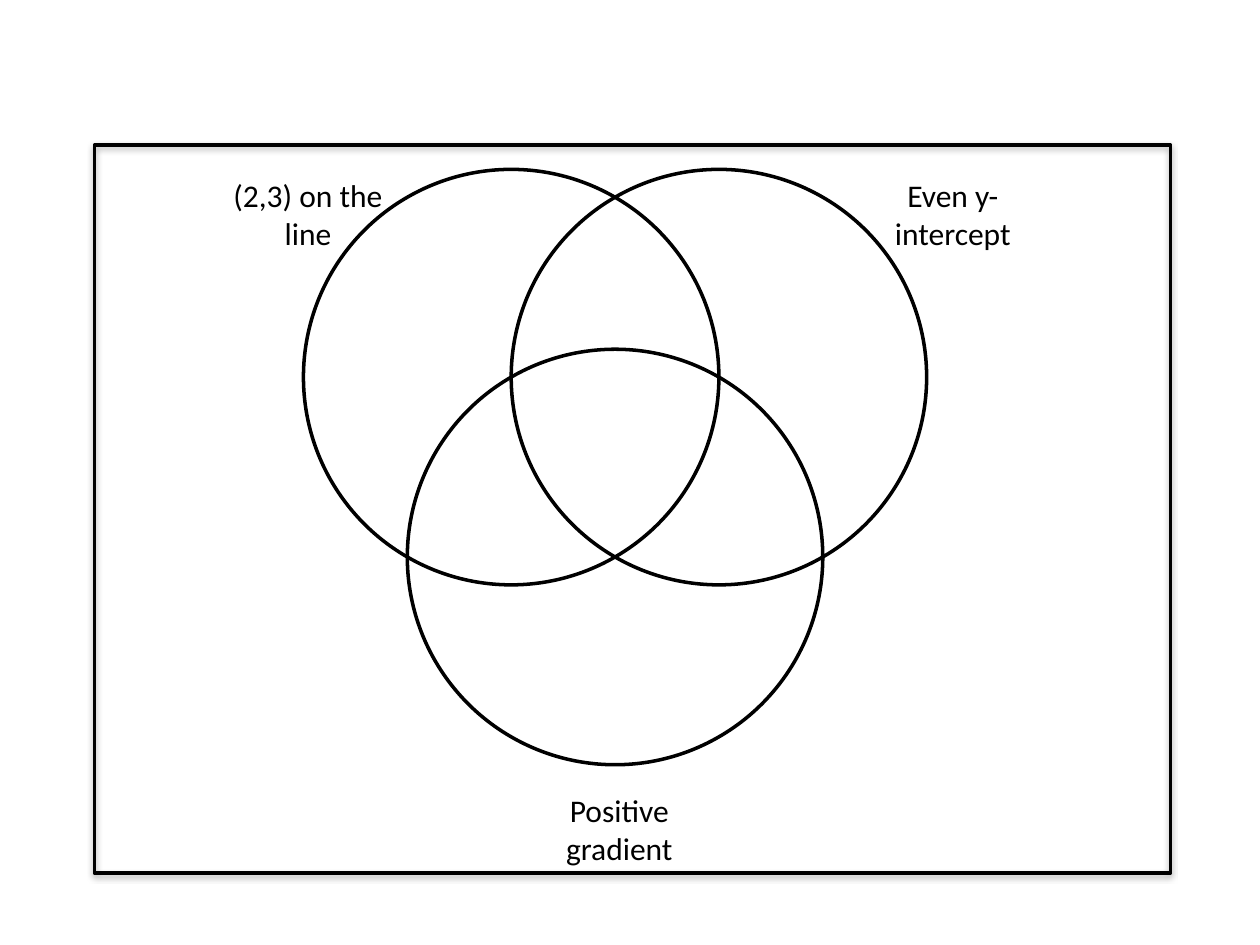
"""Build a Venn diagram slide for sorting straight lines by three properties."""
import math

from lxml import etree
from pptx import Presentation
from pptx.dml.color import RGBColor
from pptx.enum import shapes, text
from pptx.oxml import ns
from pptx.util import Pt


def color(value):
    return RGBColor.from_string(value)


def add_outline(kind, left, top, width, height):
    shape = page.shapes.add_shape(kind, Pt(left), Pt(top), Pt(width), Pt(height))
    shape.shadow.inherit = False
    shape.fill.background()
    shape.line.color.rgb = color(BLACK)
    shape.line.width = Pt(2)
    return shape


BLACK = "000000"
RADIUS = 118.7
VENN_LEFT, VENN_TOP = 173.4, 96.8
LABEL_TOP, LABEL_WIDTH, LABEL_HEIGHT = 97.2, 113, 51
FONT = {"name": "Calibri", "size": Pt(18)}

deck = Presentation()
deck.slide_width, deck.slide_height = Pt(720), Pt(540)
page = deck.slides.add_slide(deck.slide_layouts[6])

circles = []
for across, down in [(0, 0), (1, 0), (0.5, math.sqrt(3) / 2)]:
    circles.append(add_outline(shapes.MSO_SHAPE.OVAL,
                               VENN_LEFT + across * RADIUS, VENN_TOP + down * RADIUS,
                               2 * RADIUS, 2 * RADIUS))
page.shapes.add_group_shape(circles)

labels = [
    ("(2,3) on the line", 119.5, LABEL_TOP),
    ("Even y-intercept", 488, LABEL_TOP),
    ("Positive gradient", 297.4, 448.3),
]
for wording, left, top in labels:
    box = page.shapes.add_textbox(Pt(left), Pt(top), Pt(LABEL_WIDTH), Pt(LABEL_HEIGHT))
    frame = box.text_frame
    frame.word_wrap = True
    frame.auto_size = text.MSO_AUTO_SIZE.SHAPE_TO_FIT_TEXT
    para = frame.paragraphs[0]
    para.alignment = text.PP_ALIGN.CENTER
    span = para.add_run()
    span.text = wording
    span.font.color.rgb = color(BLACK)
    for attribute, value in FONT.items():
        setattr(span.font, attribute, value)

border = add_outline(shapes.MSO_SHAPE.RECTANGLE, 54, 82.8, 614.9, 416.2)
effects = border._element.spPr.find(ns.qn("a:effectLst"))
shadow = etree.SubElement(effects, ns.qn("a:outerShdw"), blurRad=str(Pt(3.1)),
                          dist=str(Pt(1.8)), dir="5400000", rotWithShape="0")
tint = etree.SubElement(shadow, ns.qn("a:srgbClr"), val=BLACK)
etree.SubElement(tint, ns.qn("a:alpha"), val="35000")

deck.save("out.pptx")
